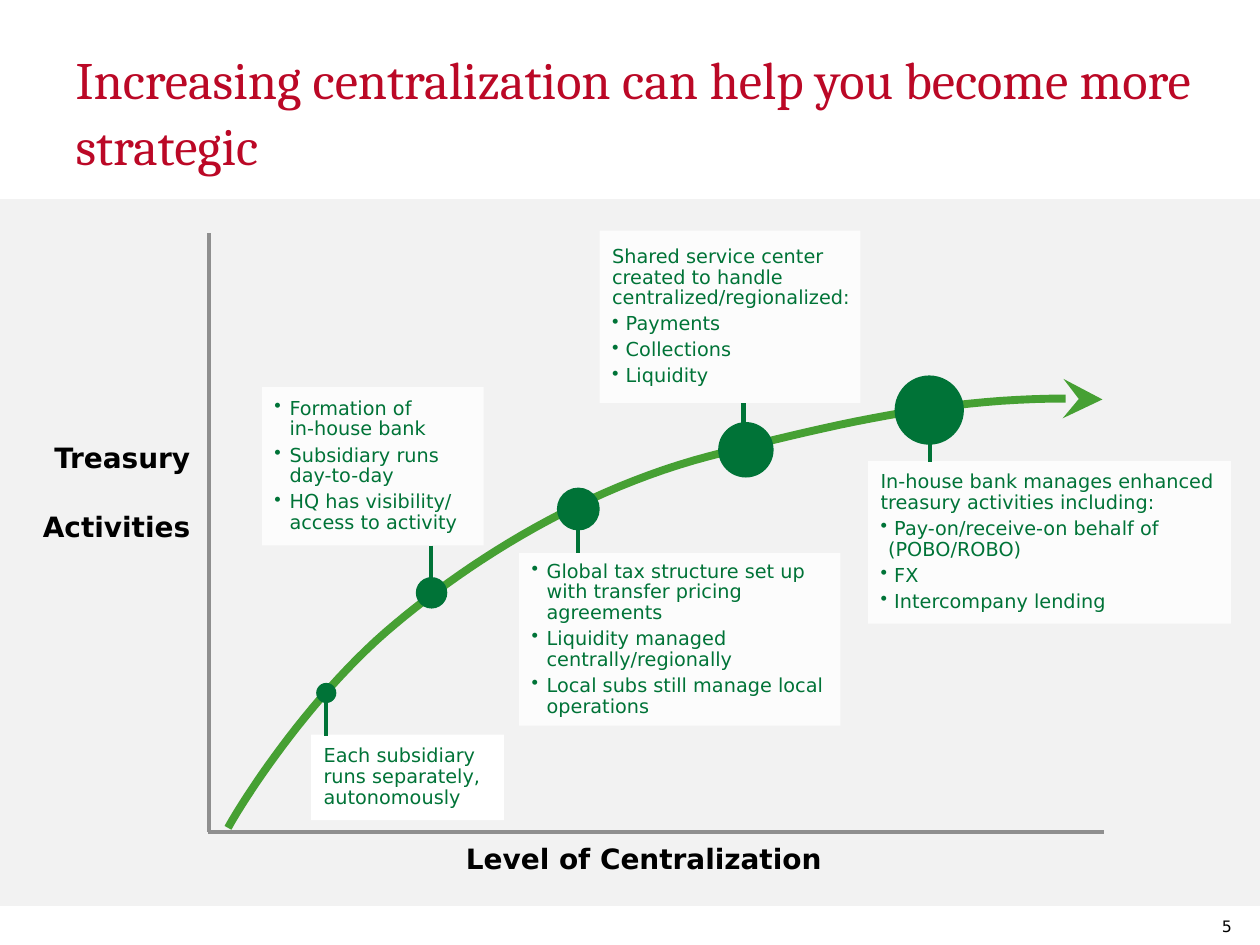
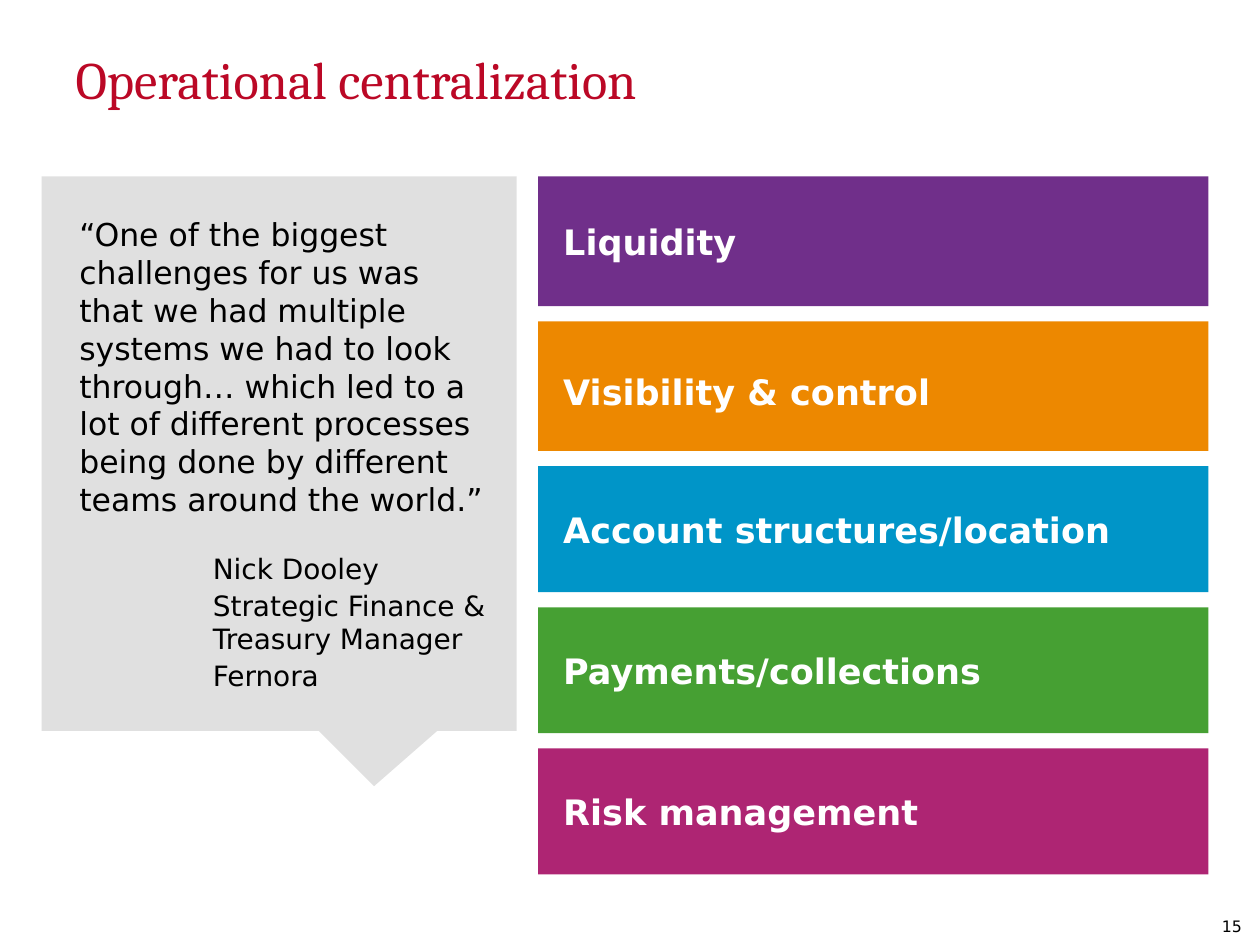
from pptx import Presentation
from pptx.dml.color import RGBColor
from pptx.enum.shapes import MSO_CONNECTOR, MSO_SHAPE
from pptx.enum.text import MSO_ANCHOR, PP_ALIGN
from pptx.oxml.ns import qn
from pptx.util import Inches, Pt
from lxml import etree

RECTANGLE = MSO_SHAPE.RECTANGLE
OVAL = MSO_SHAPE.OVAL
CALLOUT = MSO_SHAPE.RECTANGULAR_CALLOUT
STRAIGHT = MSO_CONNECTOR.STRAIGHT
TOP, MIDDLE = MSO_ANCHOR.TOP, MSO_ANCHOR.MIDDLE
LEFT, CENTER, RIGHT = PP_ALIGN.LEFT, PP_ALIGN.CENTER, PP_ALIGN.RIGHT

SERIF, SANS = "Cambria", "DejaVu Sans"
RED, DARK_GREEN, GREEN = "BB0826", "007337", "46A033"
BLACK, WHITE, AXIS_GRAY, BAND_GRAY, QUOTE_GRAY = "000000", "FFFFFF", "8F8F8F", "F2F2F2", "D9D9D9"
PURPLE, ORANGE, BLUE, MAGENTA = "702F8A", "ED8800", "0095C8", "AE2573"


def color(value):
    return RGBColor.from_string(value)


def bezier_points(start, segments, steps=24):
    """Points along a chain of cubic curves."""
    points = [start]
    for control_1, control_2, end in segments:
        begin = points[-1]
        for step in range(1, steps + 1):
            t = step / steps
            u = 1 - t
            points.append(tuple(
                u ** 3 * a + 3 * u * u * t * b + 3 * u * t * t * c + t ** 3 * d
                for a, b, c, d in zip(begin, control_1, control_2, end)))
    return points


class Deck:
    """Holds the shared style and the slide being filled."""

    def __init__(self):
        self.presentation = Presentation()
        self.presentation.slide_width = Inches(10)
        self.presentation.slide_height = Inches(7.5)
        self.slide = None

    def new_slide(self, title, number):
        layout = self.presentation.slide_layouts[6]
        self.slide = self.presentation.slides.add_slide(layout)
        self.label((0.6, 0.35, 9, 1.25), [title], size=30, font=SERIF,
                   text_color=RED, line_spacing=1.05, insets=(0, 0, 0, 0))
        self.label((9.6, 7.23, 0.4, 0.25), [str(number)], size=9,
                   insets=(0.1, 0.05, 0, 0))

    def frame(self, shape, insets, anchor):
        text_frame = shape.text_frame
        text_frame.word_wrap = True
        text_frame.vertical_anchor = anchor
        (text_frame.margin_left, text_frame.margin_top,
         text_frame.margin_right, text_frame.margin_bottom) = map(Inches, insets)

    def fill_text(self, shape, lines, size, text_color=BLACK, font=SANS, bold=False,
                  align=LEFT, line_spacing=None, space_before=0):
        text_frame = shape.text_frame
        for index, line in enumerate(lines):
            paragraph = text_frame.add_paragraph() if index else text_frame.paragraphs[0]
            paragraph.text = line
            paragraph.alignment = align
            paragraph.space_before = Pt(space_before)
            if line_spacing:
                paragraph.line_spacing = line_spacing
            for run in paragraph.runs:
                run.font.name = font
                run.font.size = Pt(size)
                run.font.bold = bold
                run.font.color.rgb = color(text_color)
        return text_frame.paragraphs

    def bullet(self, paragraph, indent):
        properties = paragraph._p.get_or_add_pPr()
        properties.set("marL", str(Inches(indent)))
        properties.set("indent", str(-Inches(indent)))
        etree.SubElement(properties, qn("a:buChar")).set("char", "•")

    def label(self, box, lines, size, insets=(0.07, 0.04, 0.07, 0.04), **style):
        shape = self.slide.shapes.add_textbox(*map(Inches, box))
        self.frame(shape, insets, TOP)
        self.fill_text(shape, lines, size, **style)

    def shape(self, kind, box, fill, opacity=100):
        shape = self.slide.shapes.add_shape(kind, *map(Inches, box))
        shape.shadow.inherit = False
        shape.line.fill.background()
        shape.fill.solid()
        shape.fill.fore_color.rgb = color(fill)
        if opacity < 100:
            fill_color = shape._element.spPr.find(qn("a:solidFill"))[0]
            etree.SubElement(fill_color, qn("a:alpha")).set("val", str(opacity * 1000))
        return shape

    def note(self, box, intro, bullets=(), indent=0.06, opacity=80, space_before=3):
        shape = self.shape(RECTANGLE, box, WHITE, opacity)
        self.frame(shape, (0.1, 0, 0, 0), MIDDLE)
        paragraphs = self.fill_text(shape, [*intro, *bullets], 11, DARK_GREEN,
                                    line_spacing=0.9, space_before=space_before)
        for paragraph in paragraphs[len(intro):]:
            self.bullet(paragraph, indent)

    def tile(self, box, text, fill, top_inset=0.05):
        shape = self.shape(RECTANGLE, box, fill)
        self.frame(shape, (0.2, top_inset, 0.1, 0.05), MIDDLE)
        self.fill_text(shape, [text], 20, WHITE, bold=True)

    def line(self, start, end, line_color, width):
        connector = self.slide.shapes.add_connector(STRAIGHT, *map(Inches, (*start, *end)))
        connector.line.color.rgb = color(line_color)
        connector.line.width = Pt(width)
        etree.SubElement(connector._element.spPr, qn("a:effectLst"))

    def arrow_curve(self, points, line_color, width):
        """Open curve with a large arrowhead at its first point."""
        emu_points = [(Inches(x), Inches(y)) for x, y in points]
        builder = self.slide.shapes.build_freeform(*emu_points[0])
        builder.add_line_segments(emu_points[1:], close=False)
        shape = builder.convert_to_shape()
        shape.shadow.inherit = False
        shape.fill.background()
        shape.line.color.rgb = color(line_color)
        shape.line.width = Pt(width)
        outline = shape._element.spPr.find(qn("a:ln"))
        etree.SubElement(outline, qn("a:round"))
        head = etree.SubElement(outline, qn("a:headEnd"))
        for name, value in (("type", "stealth"), ("w", "lg"), ("len", "lg")):
            head.set(name, value)


def build_centralization_curve(deck):
    deck.new_slide("Increasing centralization can help you become more strategic", 5)
    deck.shape(RECTANGLE, (0, 1.58, 10, 5.61), BAND_GRAY)

    # Growth curve, from the arrow tip down to the axis
    deck.arrow_curve(bezier_points((8.75, 3.17), [
        ((7.65, 3.12), (6.68, 3.35), (5.63, 3.62)),
        ((4.64, 3.88), (3.76, 4.43), (3.14, 4.95)),
        ((2.51, 5.47), (1.97, 6.28), (1.81, 6.57)),
    ]), GREEN, 4.5)

    # Stage dots: left, top, diameter
    for left, top, diameter in ((2.51, 5.42, 0.16), (3.3, 4.58, 0.25), (4.42, 3.87, 0.34),
                                (5.7, 3.35, 0.44), (7.1, 2.98, 0.55)):
        deck.shape(OVAL, (left, top, diameter, diameter), DARK_GREEN)

    # Axis labels
    deck.label((0.24, 3.46, 1.34, 0.8), ["Treasury", "Activities"], 16,
               bold=True, align=RIGHT, space_before=20)
    deck.label((2.59, 6.64, 5.04, 0.37), ["Level of Centralization"], 16,
               bold=True, align=CENTER)

    # Stage notes
    deck.note((6.89, 3.66, 2.88, 1.29),
              ["In-house bank manages enhanced treasury activities including:"],
              [" Pay-on/receive-on behalf of (POBO/ROBO)", " FX", " Intercompany lending"])
    deck.note((4.76, 1.83, 2.07, 1.37),
              ["Shared service center created to handle centralized/regionalized:"],
              [" Payments", " Collections", " Liquidity"])
    deck.note((4.12, 4.39, 2.55, 1.37), [],
              ["Global tax structure set up with transfer pricing agreements",
               "Liquidity managed centrally/regionally",
               "Local subs still manage local operations"], indent=0.12)
    deck.note((2.08, 3.07, 1.76, 1.26), [],
              ["Formation of\vin-house bank", "Subsidiary runs\vday-to-day",
               "HQ has visibility/\vaccess to activity"], indent=0.12)
    deck.note((2.47, 5.83, 1.53, 0.68), ["Each subsidiary runs separately, autonomously"],
              opacity=100, space_before=0)

    # Links between dots and notes: x, top, bottom
    for x, top, bottom in ((2.59, 5.58, 5.84), (3.42, 4.33, 4.59), (4.59, 4.19, 4.39),
                           (5.9, 3.2, 3.36), (7.38, 3.51, 3.67)):
        deck.line((x, top), (x, bottom), DARK_GREEN, 2.5)

    # Axes
    deck.line((1.66, 1.85), (1.66, 6.6), AXIS_GRAY, 2.25)
    deck.line((1.65, 6.6), (8.76, 6.6), AXIS_GRAY, 2.25)


def build_operational_centralization(deck):
    deck.new_slide("Operational centralization", 15)

    # Topic tiles
    top, gap = 1.4, 0.12
    for text, fill, height, top_inset in (
            ("Liquidity", PURPLE, 1.03, 0.05),
            ("Visibility & control", ORANGE, 1.03, 0.14),
            ("Account structures/location", BLUE, 1, 0.05),
            ("Payments/collections", GREEN, 1, 0.05),
            ("Risk management", MAGENTA, 1, 0.05)):
        deck.tile((4.27, top, 5.32, height), text, fill, top_inset)
        top += height + gap

    # Quote with its speaker
    quote = deck.shape(CALLOUT, (0.33, 1.4, 3.77, 4.4), QUOTE_GRAY, 80)
    quote.adjustments[0], quote.adjustments[1] = 0.2, 0.6
    deck.frame(quote, (0.3, 0.04, 0.07, 0.04), MIDDLE)
    paragraphs = deck.fill_text(quote, [
        "“One of the biggest challenges for us was\vthat we had multiple systems we had "
        "to look through… which led to a lot of different processes being done by "
        "different teams around the world.”",
        "Nick Dooley", "Strategic Finance & Treasury Manager", "Fernora"],
        18, space_before=1.5)
    speaker = paragraphs[1:]
    speaker[0].space_before = Pt(19.5)
    for paragraph in speaker:
        paragraph._p.get_or_add_pPr().set("marL", str(Inches(1.06)))
        paragraph.runs[0].font.size = Pt(16)


def main():
    deck = Deck()
    build_centralization_curve(deck)
    build_operational_centralization(deck)
    deck.presentation.save("out.pptx")


if __name__ == "__main__":
    main()
